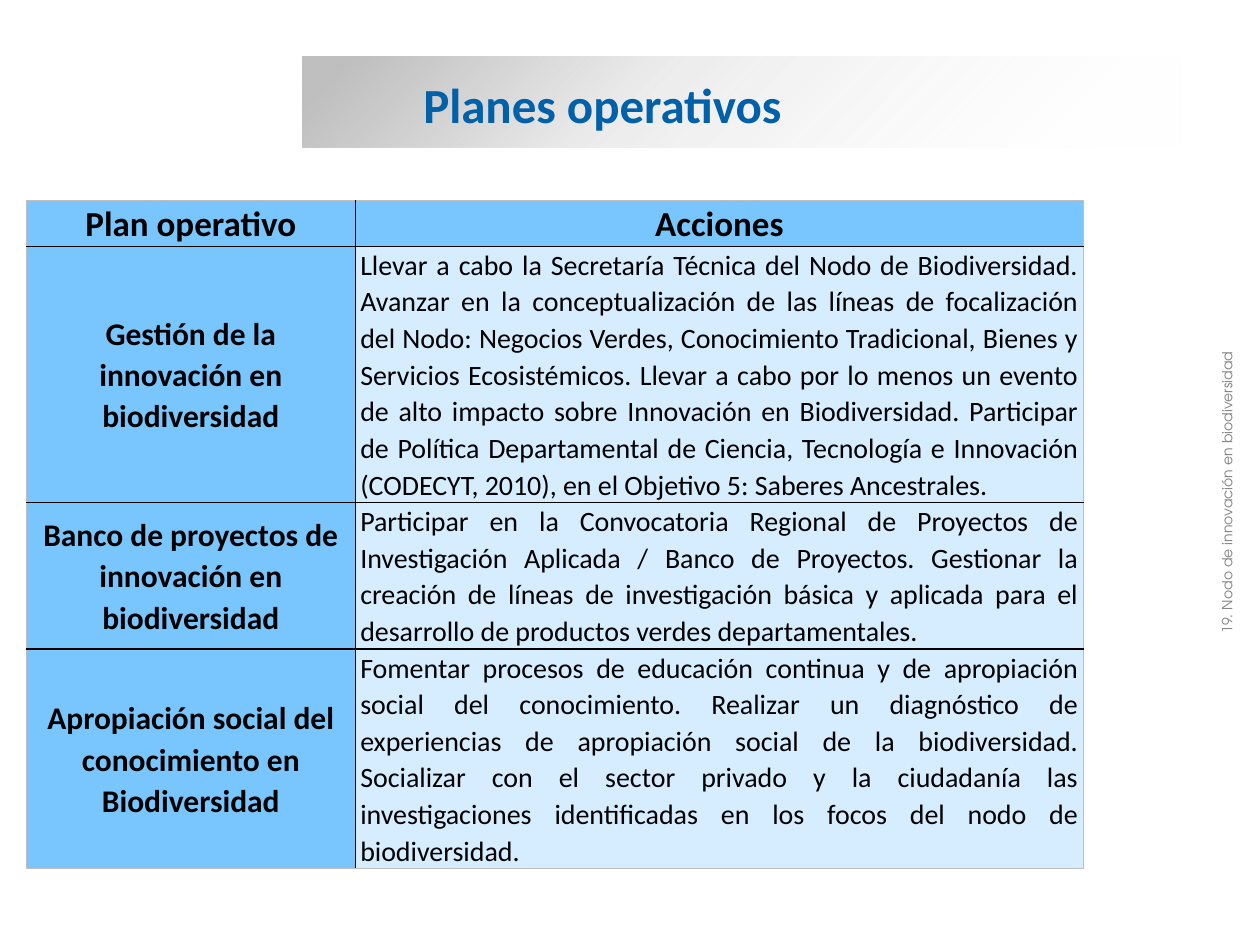
from lxml import etree
from pptx import Presentation
from pptx.dml.color import RGBColor
from pptx.enum.shapes import MSO_SHAPE
from pptx.enum.text import MSO_ANCHOR, MSO_AUTO_SIZE, PP_ALIGN
from pptx.oxml import parse_xml
from pptx.oxml.ns import nsdecls, qn
from pptx.util import Inches, Pt

BLACK, GREY, BLUE, PALE = "000000", "BFBFBF", "79C6FF", "D5EDFF"
HEADS = ("Plan operativo", "Acciones")
PLANS = (
    ("Gestión de la innovación en biodiversidad",
     "Llevar a cabo la Secretaría Técnica del Nodo de Biodiversidad. "
     "Avanzar en la conceptualización de las líneas de focalización del Nodo: "
     "Negocios Verdes, Conocimiento Tradicional, Bienes y Servicios Ecosistémicos. "
     "Llevar a cabo por lo menos un evento de alto impacto sobre Innovación en "
     "Biodiversidad. Participar de Política Departamental de Ciencia, Tecnología e "
     "Innovación (CODECYT, 2010), en el Objetivo 5: Saberes Ancestrales."),
    ("Banco de proyectos de innovación en biodiversidad",
     "Participar en la Convocatoria Regional de Proyectos de Investigación "
     "Aplicada / Banco de Proyectos. Gestionar la creación de líneas de "
     "investigación básica y aplicada para el desarrollo de productos verdes "
     "departamentales."),
    ("Apropiación social del conocimiento en Biodiversidad",
     "Fomentar procesos de educación continua y de apropiación social del "
     "conocimiento. Realizar un diagnóstico de experiencias de apropiación social "
     "de la biodiversidad. Socializar con el sector privado y la ciudadanía las "
     "investigaciones identificadas en los focos del nodo de biodiversidad."),
)
WIDTHS = (2.61, 5.78)
HEIGHTS = (0.36, 1.99, 1.14, 1.71)


def color(code):
    return RGBColor.from_string(code)


def place(shape, left, top, width, height):
    shape.left, shape.top = Inches(left), Inches(top)
    shape.width, shape.height = Inches(width), Inches(height)


def write(frame, text, size, code=BLACK, bold=False, align=PP_ALIGN.LEFT, face="Calibri"):
    frame.text = text
    frame.word_wrap = True
    para = frame.paragraphs[0]
    para.alignment = align
    font = para.runs[0].font
    font.name, font.size, font.bold = face, Pt(size), bold
    font.color.rgb = color(code)
    return para


def add_band(slide):
    """Add the grey band that fades to clear, behind everything else."""
    band = slide.shapes.add_shape(MSO_SHAPE.RECTANGLE, 0, 0, 0, 0)
    place(band, 2.4, 0.45, 6.98, 0.72)
    band.shadow.inherit = False
    band.line.fill.background()
    stops = "".join(
        f'<a:gs pos="{pos * 1000}"><a:srgbClr val="{code}">'
        f'<a:alpha val="{alpha * 1000}"/></a:srgbClr></a:gs>'
        for pos, code, alpha in ((5, GREY, 100), (37, GREY, 31), (100, "FFFFFF", 0)))
    fade = parse_xml(
        f'<a:gradFill {nsdecls("a")} rotWithShape="1"><a:gsLst>{stops}</a:gsLst>'
        '<a:lin ang="2700000" scaled="0"/></a:gradFill>')
    band._element.spPr.find(qn("a:prstGeom")).addnext(fade)
    slide.shapes._spTree.insert(2, band._element)


def add_title(slide):
    title = slide.shapes.title
    place(title, 3.26, 0.54, 6.2, 0.57)
    frame = title.text_frame
    write(frame, "Planes operativos", 28, "0060A8", True)
    frame.auto_size = MSO_AUTO_SIZE.NONE
    frame.vertical_anchor = MSO_ANCHOR.MIDDLE


def set_edges(cell, codes):
    """Draw left, right, top and bottom borders, placed before the cell fill."""
    props = cell._tc.get_or_add_tcPr()
    for spot, (side, code) in enumerate(zip("LRTB", codes)):
        line = etree.Element(qn(f"a:ln{side}"), w=str(Pt(1)))
        fill = etree.SubElement(line, qn("a:solidFill"))
        etree.SubElement(fill, qn("a:srgbClr"), val=code)
        props.insert(spot, line)


def fill_cell(cell, text, size, bold, align, code):
    cell.fill.solid()
    cell.fill.fore_color.rgb = color(code)
    cell.margin_left = cell.margin_right = Inches(0.04)
    cell.margin_top = cell.margin_bottom = 0
    cell.vertical_anchor = MSO_ANCHOR.MIDDLE
    write(cell.text_frame, text, size, bold=bold, align=align).line_spacing = 1.07


def add_plans(slide):
    rows = (HEADS, *PLANS)
    table = slide.shapes.add_table(
        len(rows), len(HEADS), Inches(0.21), Inches(1.59),
        Inches(sum(WIDTHS)), Inches(sum(HEIGHTS))).table
    for column, width in zip(table.columns, WIDTHS):
        column.width = Inches(width)
    for row, height in zip(table.rows, HEIGHTS):
        row.height = Inches(height)
    for r, texts in enumerate(rows):
        for c, text in enumerate(texts):
            cell = table.cell(r, c)
            if r and c:
                fill_cell(cell, text, 16, False, PP_ALIGN.JUSTIFY, PALE)
            else:
                fill_cell(cell, text, 18 if r else 20, True, PP_ALIGN.CENTER, BLUE)
            outer = (c == 0, c == len(HEADS) - 1, r == 0, r == len(rows) - 1)
            set_edges(cell, [GREY if edge else BLACK for edge in outer])


def add_label(slide):
    label = slide.shapes.add_textbox(0, 0, 0, 0)
    place(label, 7.22, 3.79, 5.04, 0.24)
    label.rotation = 270
    write(label.text_frame, "19. Nodo de innovación en biodiversidad", 8, "808080",
          align=PP_ALIGN.CENTER, face="TeX Gyre Adventor")


def main():
    deck = Presentation()
    deck.slide_width, deck.slide_height = Inches(10), Inches(7.5)
    slide = deck.slides.add_slide(deck.slide_layouts[5])
    add_band(slide)
    add_title(slide)
    add_plans(slide)
    add_label(slide)
    deck.save("out.pptx")


if __name__ == "__main__":
    main()
